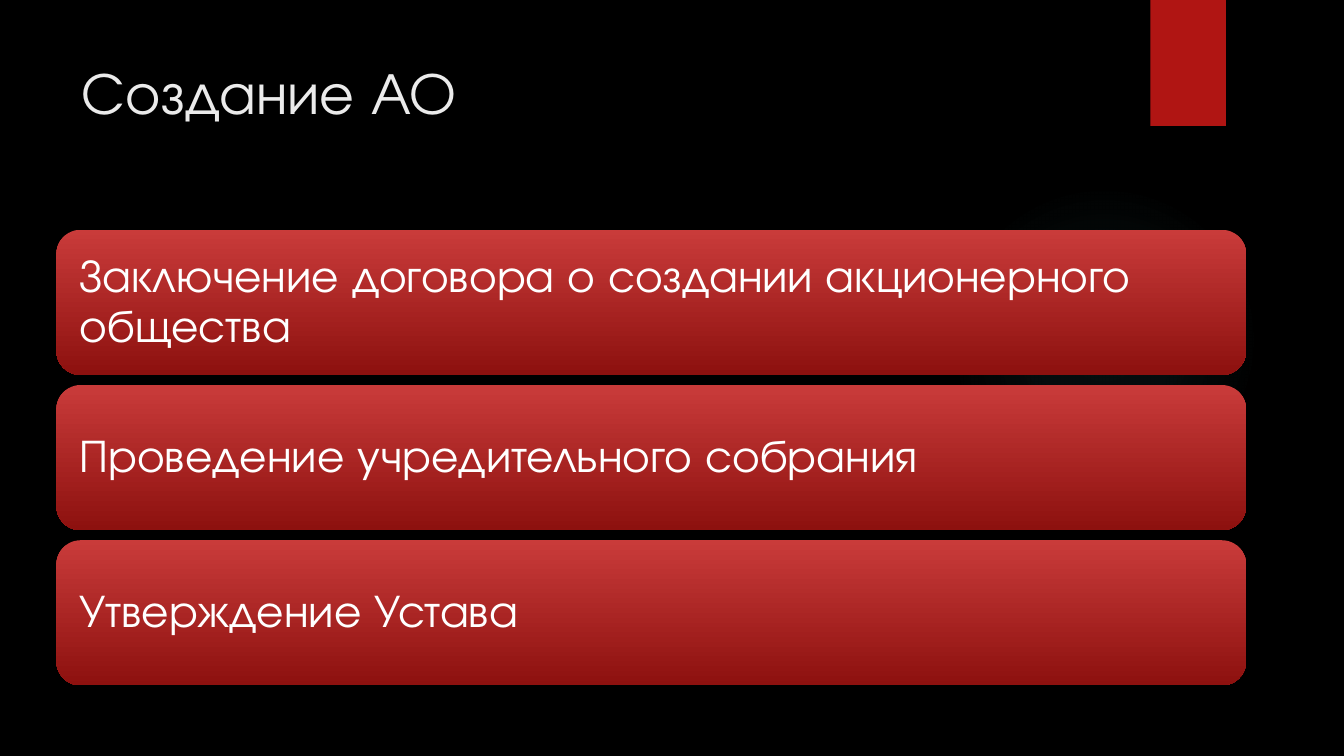
from lxml import etree
from pptx import Presentation
from pptx.dml.color import RGBColor
from pptx.enum.shapes import MSO_SHAPE as SHAPE
from pptx.enum.text import MSO_ANCHOR as ANCHOR, PP_ALIGN as ALIGN
from pptx.oxml.ns import qn
from pptx.util import Inches, Pt

FONT = "TeX Gyre Adventor"
COLORS = {
    "background": "000000", "glow": "50B9C1", "ribbon": "B01513",
    "title": "EBEBEB", "card_top": "C93B3A", "card_bottom": "8D110F",
    "card_text": "FFFFFF",
}
STEPS = [
    "Заключение договора о создании акционерного общества",
    "Проведение учредительного собрания",
    "Утверждение Устава",
]


def rgb(name):
    return RGBColor.from_string(COLORS[name])


def add_plain_shape(kind, left, top, width, height):
    sp = slide.shapes.add_shape(
        kind, Inches(left), Inches(top), Inches(width), Inches(height))
    sp.shadow.inherit = False
    sp.line.fill.background()
    return sp


prs = Presentation()
prs.slide_width, prs.slide_height = Inches(13.33), Inches(7.5)
slide = prs.slides.add_slide(prs.slide_layouts[5])
slide.background.fill.solid()
slide.background.fill.fore_color.rgb = rgb("background")

# Faint round glow: a radial gradient fading to transparent
glow = add_plain_shape(SHAPE.OVAL, 9.41, 1.83, 3.08, 3.08)
glow.fill.gradient()
grad = glow._element.spPr.find(qn("a:gradFill"))
for child in list(grad):
    grad.remove(child)
stops = etree.SubElement(grad, qn("a:gsLst"))
for position, opacity in [(0, 7), (36, 6), (69, 0)]:
    stop = etree.SubElement(stops, qn("a:gs"), pos=str(position * 1000))
    color = etree.SubElement(stop, qn("a:srgbClr"), val=COLORS["glow"])
    etree.SubElement(color, qn("a:alpha"), val=str(opacity * 1000))
radial = etree.SubElement(grad, qn("a:path"), path="circle")
etree.SubElement(radial, qn("a:fillToRect"),
                 l="50000", t="50000", r="50000", b="50000")

# Ribbon at the top edge
ribbon = add_plain_shape(SHAPE.RECTANGLE, 11.41, 0, 0.75, 1.25)
ribbon.fill.solid()
ribbon.fill.fore_color.rgb = rgb("ribbon")

# Title
title = slide.shapes.title
title.left, title.top = Inches(0.71), Inches(0.5)
title.width, title.height = Inches(10.29), Inches(1.17)
tf = title.text_frame
tf.text = "Создание АО"
tf.vertical_anchor = ANCHOR.TOP
p = tf.paragraphs[0]
p.alignment = ALIGN.LEFT
r = p.runs[0]
r.font.name, r.font.size = FONT, Pt(42)
r.font.color.rgb = rgb("title")

# Step cards, one under another
for i, step in enumerate(STEPS):
    card = add_plain_shape(SHAPE.ROUNDED_RECTANGLE, 0.56, 2.28 + 1.54 * i, 11.8, 1.44)
    card.fill.gradient()
    card.fill.gradient_angle = 270
    for stop, name in zip(card.fill.gradient_stops, ["card_top", "card_bottom"]):
        stop.color.rgb = rgb(name)
    tf = card.text_frame
    tf.text = step
    tf.word_wrap = True
    tf.vertical_anchor = ANCHOR.MIDDLE
    tf.margin_left = tf.margin_right = Inches(0.16)
    tf.margin_top = tf.margin_bottom = Inches(0.16)
    p = tf.paragraphs[0]
    p.alignment = ALIGN.LEFT
    p.line_spacing = 0.9
    r = p.runs[0]
    r.font.name, r.font.size = FONT, Pt(33)
    r.font.color.rgb = rgb("card_text")

prs.save("out.pptx")
